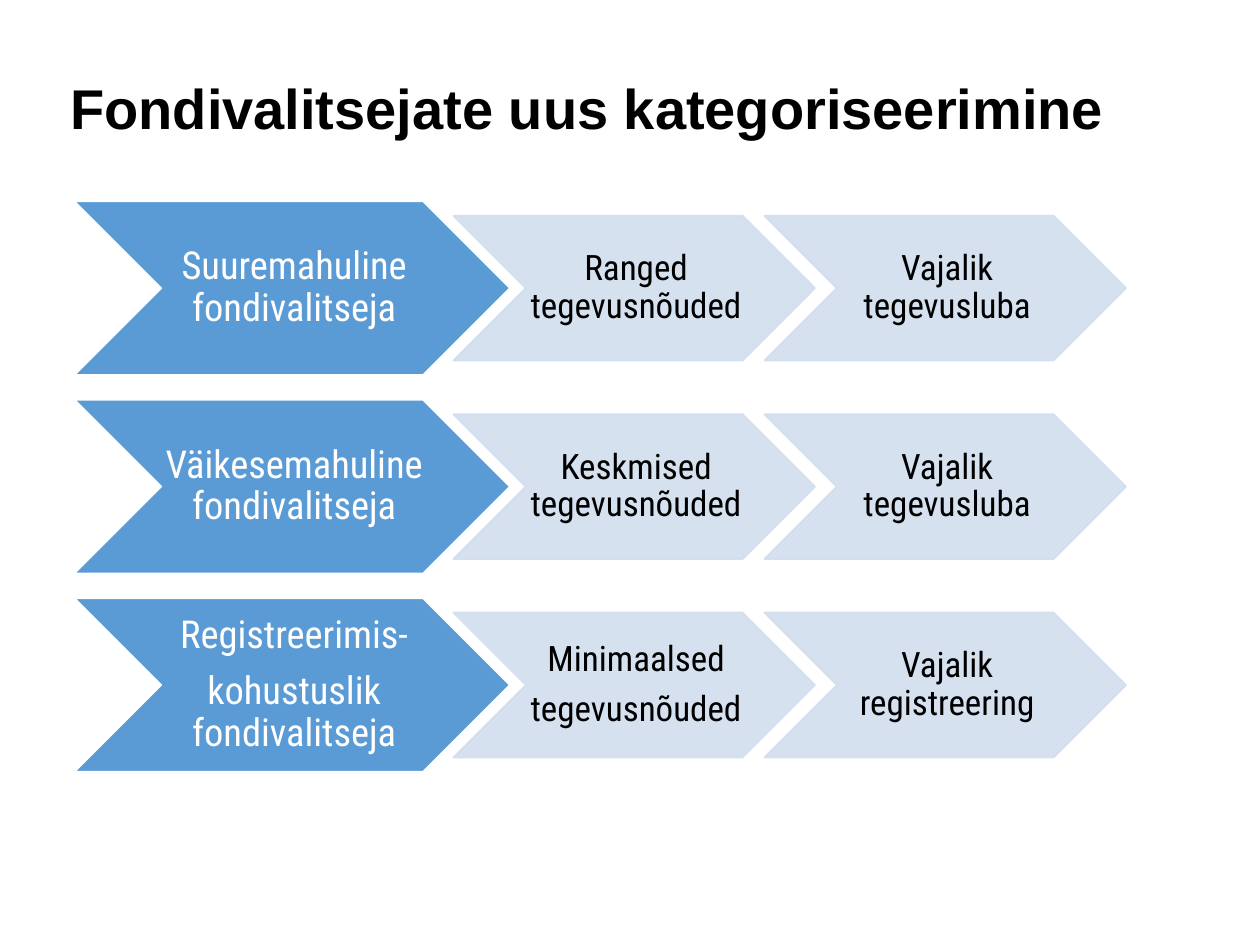
from dataclasses import dataclass

from pptx import Presentation
from pptx import util as u
from pptx.dml.color import RGBColor
from pptx.enum import shapes, text
from pptx.oxml.xmlchemy import OxmlElement


@dataclass(frozen=True)
class ChevronStyle:
    width: float
    height: float
    fill: str
    line: str
    color: str
    size: int
    space_after: int
    inset: float
    opacity: int = 100


@dataclass(frozen=True)
class Theme:
    title_font: str = "Arial"
    body_font: str = "Roboto Condensed"
    title_color: str = "000000"
    title_size: int = 32
    category: ChevronStyle = ChevronStyle(
        8.78, 3.5, "5B9BD5", "FFFFFF", "FFFFFF", 22, 8, 0.05)
    requirement: ChevronStyle = ChevronStyle(
        7.29, 2.92, "D2DEEF", "D2DEEF", "000000", 20, 7, 0.03, 90)


ROW_TOP, ROW_STEP = 4.06, 4.0
CATEGORY_LEFT = 1.5
REQUIREMENT_LEFT, REQUIREMENT_STEP = 9.14, 6.27

ROWS = [
    ("Suuremahuline fondivalitseja",
     "Ranged tegevusnõuded", "Vajalik tegevusluba"),
    ("Väikesemahuline fondivalitseja",
     "Keskmised tegevusnõuded", "Vajalik tegevusluba"),
    ("Registreerimis-\nkohustuslik fondivalitseja",
     "Minimaalsed\ntegevusnõuded", "Vajalik registreering"),
]


def paint(fill, color, opacity):
    fill.solid()
    fill.fore_color.rgb = RGBColor.from_string(color)
    if opacity < 100:
        alpha = OxmlElement("a:alpha")
        alpha.set("val", str(opacity * 1000))
        fill._xPr.find(".//{*}srgbClr").append(alpha)


class SlideBuilder:
    def __init__(self, slide, theme):
        self.s = slide
        self.theme = theme

    def title(self, words, left, top, width, height):
        sp = self.s.shapes.title
        sp.left, sp.top = u.Cm(left), u.Cm(top)
        sp.width, sp.height = u.Cm(width), u.Cm(height)
        tf = sp.text_frame
        tf.text = words
        tf.word_wrap = True
        tf.vertical_anchor = text.MSO_ANCHOR.TOP
        tf.margin_left = tf.margin_right = tf.margin_bottom = 0
        tf.margin_top = u.Cm(0.15)
        p = tf.paragraphs[0]
        p.alignment = text.PP_ALIGN.LEFT
        p.line_spacing = 0.88
        self.set_font(p, self.theme.title_font, self.theme.title_size,
                      self.theme.title_color, bold=True)

    def chevron(self, words, left, middle, style):
        """Draw a chevron centred vertically on middle; newlines split paragraphs."""
        sp = self.s.shapes.add_shape(
            shapes.MSO_SHAPE.CHEVRON, u.Cm(left), u.Cm(middle - style.height / 2),
            u.Cm(style.width), u.Cm(style.height))
        sp.shadow.inherit = False
        paint(sp.fill, style.fill, style.opacity)
        paint(sp.line.fill, style.line, style.opacity)
        sp.line.width = u.Pt(1)
        tf = sp.text_frame
        tf.text = words
        tf.word_wrap = True
        tf.vertical_anchor = text.MSO_ANCHOR.MIDDLE
        tf.margin_left, tf.margin_right = u.Cm(0.08), 0
        tf.margin_top = tf.margin_bottom = u.Cm(style.inset)
        for p in tf.paragraphs:
            p.alignment = text.PP_ALIGN.CENTER
            p.line_spacing = 0.9
            p.space_after = u.Pt(style.space_after)
            self.set_font(p, self.theme.body_font, style.size, style.color)

    @staticmethod
    def set_font(p, name, size, color, bold=False):
        p.font.name = name
        p.font.size = u.Pt(size)
        p.font.bold = bold
        p.font.color.rgb = RGBColor.from_string(color)


def main():
    prs = Presentation()
    prs.slide_width, prs.slide_height = u.Cm(25.4), u.Cm(19.05)
    theme = Theme()
    builder = SlideBuilder(prs.slides.add_slide(prs.slide_layouts[5]), theme)
    builder.title("Fondivalitsejate uus kategoriseerimine", 1.42, 1.5, 22.35, 3)
    for row, (category, *requirements) in enumerate(ROWS):
        middle = ROW_TOP + row * ROW_STEP + theme.category.height / 2
        builder.chevron(category, CATEGORY_LEFT, middle, theme.category)
        for col, words in enumerate(requirements):
            builder.chevron(words, REQUIREMENT_LEFT + col * REQUIREMENT_STEP,
                            middle, theme.requirement)
    prs.save("out.pptx")


if __name__ == "__main__":
    main()
